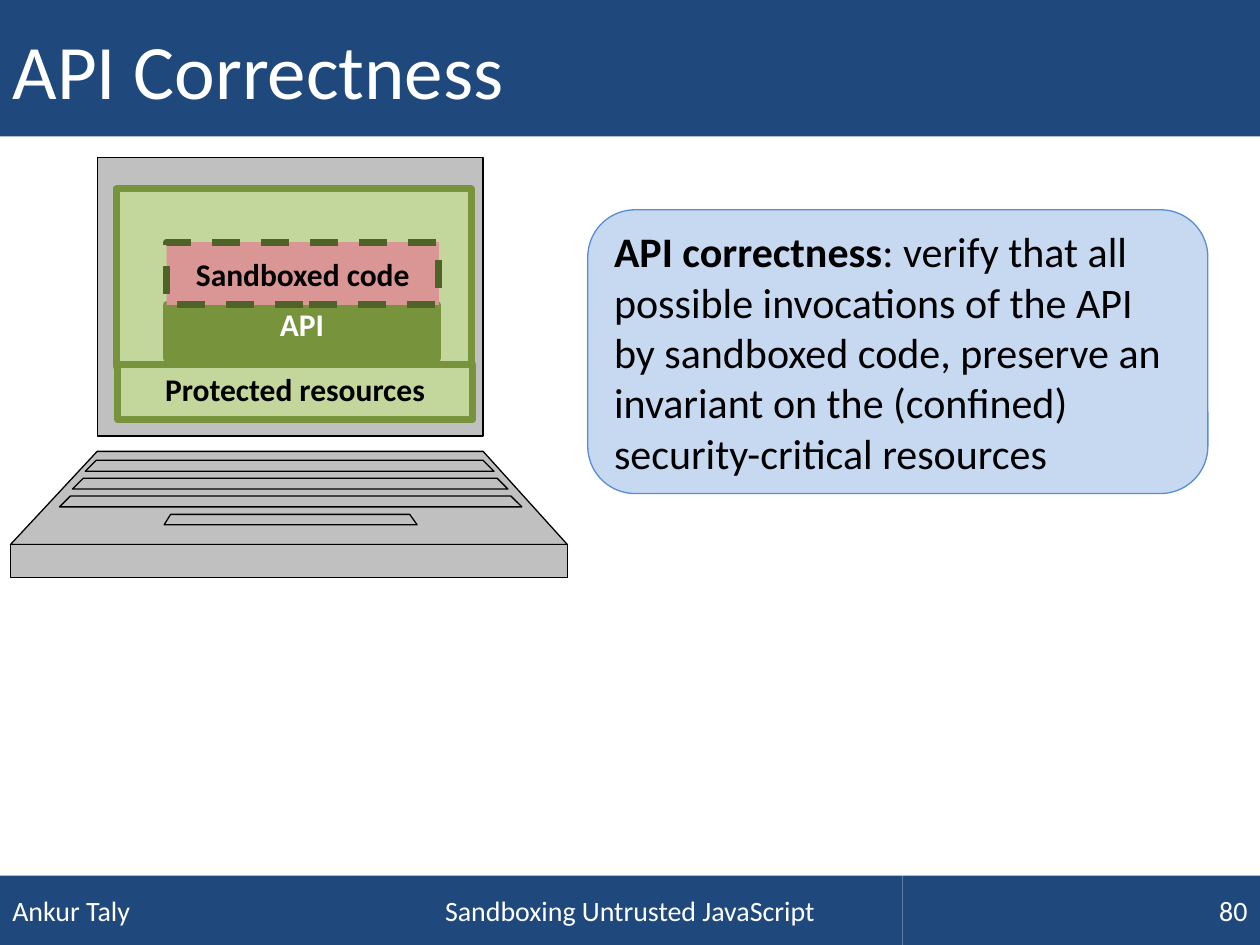
from copy import deepcopy

from pptx import Presentation
from pptx.dml.color import RGBColor
from pptx.enum.dml import MSO_LINE
from pptx.enum.shapes import MSO_SHAPE as Shape
from pptx.enum.text import MSO_ANCHOR as Anchor, PP_ALIGN as Align
from pptx.oxml.ns import qn
from pptx.util import Cm, Pt

NAVY, WHITE, BLACK = "1F497D", "FFFFFF", "000000"
LIGHT_GREEN, GREEN, DARK_GREEN = "C3D69B", "77933C", "4F6228"
SLIDE_WIDTH, SLIDE_HEIGHT = 25.4, 19.05


def paint(part, fill, line=None, width=0.75):
    """Set the fill and outline of a shape and drop its shadow."""
    part.shadow.inherit = False
    part.fill.solid()
    part.fill.fore_color.rgb = RGBColor.from_string(fill)
    if line:
        part.line.color.rgb = RGBColor.from_string(line)
        part.line.width = Pt(width)
    else:
        part.line.fill.background()


def write(part, runs, size, color, align=Align.LEFT, anchor=Anchor.MIDDLE):
    """Fill a shape with one paragraph of (text, bold) runs."""
    frame = part.text_frame
    frame.word_wrap = True
    frame.vertical_anchor = anchor
    paragraph = frame.paragraphs[0]
    paragraph.alignment = align
    for words, bold in runs:
        run = paragraph.add_run()
        run.text = words
        run.font.name = "Calibri"
        run.font.size = Pt(size)
        run.font.bold = bold
        run.font.color.rgb = RGBColor.from_string(color)


def add_block(slide, kind, box, fill, line=None, width=0.75):
    """Add a painted preset shape in a box given in centimetres."""
    block = slide.shapes.add_shape(kind, *map(Cm, box))
    paint(block, fill, line, width)
    return block


def add_title_bar(slide, box):
    """Turn the title placeholder into the top bar."""
    title = slide.shapes.title
    title.left, title.top, title.width, title.height = map(Cm, box)
    paint(title, NAVY)
    write(title, [("API Correctness", False)], 44, WHITE)


def add_footer(slide, box):
    """Place author, talk title and page number side by side."""
    left, top, width, height = box
    side = 7.2
    cells = [
        ("Ankur Taly", side, Align.LEFT),
        ("Sandboxing Untrusted JavaScript", width - 2 * side, Align.CENTER),
        ("80", side, Align.RIGHT),
    ]
    for words, cell_width, align in cells:
        cell = add_block(slide, Shape.RECTANGLE, (left, top, cell_width, height), NAVY)
        write(cell, [(words, False)], 16, WHITE, align)
        left += cell_width


def add_definition(slide, box):
    """Add the rounded box that defines API correctness."""
    definition = add_block(slide, Shape.ROUNDED_RECTANGLE, box, "C6D9F1", "558ED5")
    write(definition, [
        ("API correctness", True),
        (": verify that all possible invocations of the API by sandboxed code, "
         "preserve an invariant on the (confined) security-critical resources", False),
    ], 24, BLACK)


def split_contours(outline):
    """Give every contour of a freeform its own filled path."""
    contours = outline._element.find(".//" + qn("a:pathLst"))
    combined = contours[0]
    contours.remove(combined)
    for segment in combined:
        if segment.tag == qn("a:moveTo"):
            contour = deepcopy(combined)
            for child in list(contour):
                contour.remove(child)
            contours.append(contour)
        contour.append(deepcopy(segment))


def add_laptop(slide, left, top):
    """Draw the laptop as trapezoids: y, left and right of the top, then the bottom."""
    trapezoids = [
        (0, 1.75, 9.53, 5.61, 1.75, 9.53),
        (5.92, 1.75, 9.53, 7.8, 0, 11.23),
        (7.8, 0, 11.23, 8.46, 0, 11.23),
        (0.61, 2.18, 9.12, 5, 2.18, 9.12),
    ]
    for row in range(3):
        y, left_end, right_end = 6.1 + 0.36 * row, 1.73 - 0.26 * row, 9.53 + 0.28 * row
        trapezoids.append((y, left_end, right_end, y + 0.22, left_end - 0.22, right_end + 0.22))
    trapezoids.append((7.19, 3.23, 8.05, 7.4, 3.1, 8.2))

    builder = None
    for y1, left1, right1, y2, left2, right2 in trapezoids:
        start, *others = [
            (Cm(left + x), Cm(top + y))
            for x, y in ((left1, y1), (right1, y1), (right2, y2), (left2, y2))
        ]
        if builder:
            builder.move_to(*start)
        else:
            builder = slide.shapes.build_freeform(*start)
        builder.add_line_segments(others, close=True)
    laptop = builder.convert_to_shape()
    split_contours(laptop)
    paint(laptop, "C0C0C0", BLACK)


def add_screen_stack(slide, left, top):
    """Stack sandbox, API and protected resources on the screen."""
    add_block(slide, Shape.RECTANGLE, (left, top, 7.16, 3.58), LIGHT_GREEN, GREEN, 4)
    layers = [
        ("Protected resources", (0.03, 3.53, 7.16, 1.12), LIGHT_GREEN, GREEN, 4, BLACK, Anchor.TOP),
        ("API", (1.02, 2.34, 5.46, 1.07), GREEN, GREEN, 4.5, WHITE, Anchor.TOP),
        ("Sandboxed code", (1.02, 1.07, 5.49, 1.27), "D99694", DARK_GREEN, 4, BLACK, Anchor.MIDDLE),
    ]
    for label, (x, y, width, height), fill, line, weight, color, anchor in layers:
        layer = add_block(slide, Shape.RECTANGLE, (left + x, top + y, width, height), fill, line, weight)
        write(layer, [(label, True)], 18, color, Align.CENTER, anchor)
        if label == "API":
            layer.text_frame.margin_top = layer.text_frame.margin_bottom = 0
        if label == "Sandboxed code":
            layer.line.dash_style = MSO_LINE.DASH


def main():
    """Build the slide and save it."""
    deck = Presentation()
    deck.slide_width, deck.slide_height = Cm(SLIDE_WIDTH), Cm(SLIDE_HEIGHT)
    slide = deck.slides.add_slide(deck.slide_layouts[5])
    add_title_bar(slide, (0, 0, SLIDE_WIDTH, 2.75))
    add_footer(slide, (0, 17.65, SLIDE_WIDTH, 1.4))
    add_definition(slide, (11.85, 4.23, 12.5, 5.72))
    add_laptop(slide, 0.21, 3.18)
    add_screen_stack(slide, 2.34, 3.81)
    deck.save("out.pptx")


if __name__ == "__main__":
    main()
